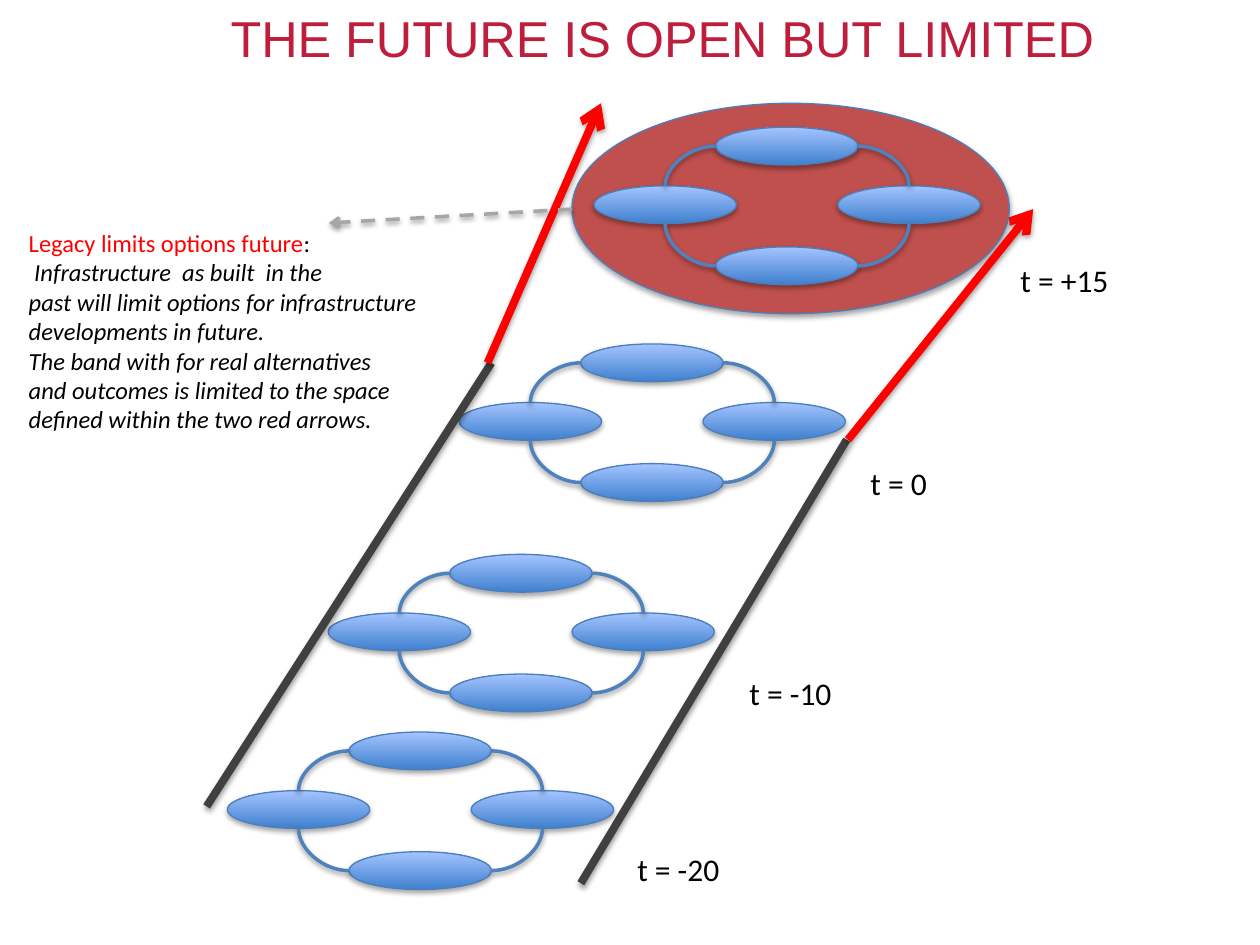
import itertools

import lxml.etree
import pptx
import pptx.dml.color
import pptx.enum.dml
import pptx.enum.shapes
import pptx.enum.text
import pptx.oxml.ns
import pptx.util

COLORS = {
    "title": "BF1D3C",
    "future": "C0504D",
    "outline": "4B7EBC",
    "deep": "3F80CE",
    "pale": "A4C4FF",
    "curve": "4F81BD",
    "past": "404040",
    "limit": "FF0000",
    "note": "A6A6A6",
    "shadow": "000000",
    "text": "000000",
}
NODE_WIDTH, NODE_HEIGHT = 11.3, 3
NODE_OFFSETS = {"top": (0, 0), "left": (-9.65, 4.65), "right": (9.7, 4.65), "bottom": (0, 9.5)}
RINGS = [(46.1, 27.3), (56.8, 10.1), (35.7, 44), (27.7, 58.1)]
RAILS = [
    ((16.4, 64), (39, 28.8), "past", False),
    ((46.1, 70.1), (67.2, 34.9), "past", False),
    ((67.3, 34.9), (82, 16.6), "limit", True),
    ((38.7, 28.8), (47.7, 8.2), "limit", True),
]
TIMES = [
    ("t = -20", 49.6, 67, 8.6),
    ("t = -10", 58.5, 53, 8.6),
    ("t = 0", 68.1, 36.3, 6.5),
    ("t = +15", 80, 20.2, 9.1),
]
LEGACY = [
    " Infrastructure  as built  in the",
    "past will limit options for infrastructure",
    "developments in future.",
    "The band with for real alternatives",
    "and outcomes is limited to the space",
    "defined within the two red arrows.",
]


def rgb(name):
    return pptx.dml.color.RGBColor.from_string(COLORS[name])


def add_element(parent, tag, **attributes):
    return lxml.etree.SubElement(parent, pptx.oxml.ns.qn(tag), attributes)


class Painter:
    columns, rows = 100, 75

    def __init__(self, deck):
        self.page = deck.slides.add_slide(deck.slide_layouts[6])
        self.cell_width = deck.slide_width / self.columns
        self.cell_height = deck.slide_height / self.rows

    def place(self, *lengths):
        sizes = itertools.cycle((self.cell_width, self.cell_height))
        return [round(length * size) for length, size in zip(lengths, sizes)]

    def shade(self, item, distance, opacity):
        effects = add_element(item._element.spPr, "a:effectLst")
        shadow = add_element(
            effects, "a:outerShdw", blurRad=str(pptx.util.Pt(3.1)),
            dist=str(pptx.util.Pt(distance)), dir="5400000", rotWithShape="0",
        )
        color = add_element(shadow, "a:srgbClr", val=COLORS["shadow"])
        add_element(color, "a:alpha", val=str(opacity * 1000))

    def ellipse(self, left, top, width, height, colors):
        shape = self.page.shapes.add_shape(
            pptx.enum.shapes.MSO_SHAPE.OVAL, *self.place(left, top, width, height))
        if len(colors) == 1:
            shape.fill.solid()
            shape.fill.fore_color.rgb = rgb(colors[0])
        else:
            shape.fill.gradient()
            shape.fill.gradient_angle = 90
            for stop, color, position in zip(shape.fill.gradient_stops, colors, (0, 1)):
                stop.color.rgb = rgb(color)
                stop.position = position
        shape.line.color.rgb = rgb("outline")
        shape.line.width = pptx.util.Pt(0.75)
        self.shade(shape, 1.8, 35)

    def line(self, start, end, color, width, arrow=False, dash=None, curved=False):
        kind = pptx.enum.shapes.MSO_CONNECTOR
        connector = self.page.shapes.add_connector(
            kind.CURVE if curved else kind.STRAIGHT, *self.place(*start, *end))
        if curved:
            connector._element.spPr.prstGeom.set("prst", "curvedConnector2")
        connector.line.color.rgb = rgb(color)
        for name, value in {"width": pptx.util.Pt(width), "dash_style": dash}.items():
            setattr(connector.line, name, value)
        if arrow:
            add_element(connector.line._ln, "a:tailEnd", type="arrow")
        self.shade(connector, 1.6, 38)

    def ring(self, left, top):
        nodes = {name: (left + x, top + y) for name, (x, y) in NODE_OFFSETS.items()}
        for corner in nodes.values():
            self.ellipse(*corner, NODE_WIDTH, NODE_HEIGHT, ("deep", "pale"))
        for pole, side in itertools.product(("top", "bottom"), ("left", "right")):
            pole_x, pole_y = nodes[pole]
            side_x, side_y = nodes[side]
            start = (pole_x + NODE_WIDTH * (side == "right"), pole_y + NODE_HEIGHT / 2)
            end = (side_x + NODE_WIDTH / 2, side_y + NODE_HEIGHT * (pole == "bottom"))
            self.line(start, end, "curve", 2, curved=True)

    def text(self, left, top, width, height, paragraphs, size, font="Calibri", title=False):
        box = self.page.shapes.add_textbox(*self.place(left, top, width, height))
        options = pptx.enum.text
        frame_format = {
            "word_wrap": title,
            "auto_size": options.MSO_AUTO_SIZE.NONE if title else options.MSO_AUTO_SIZE.SHAPE_TO_FIT_TEXT,
            "vertical_anchor": options.MSO_ANCHOR.MIDDLE if title else options.MSO_ANCHOR.TOP,
        }
        for name, value in frame_format.items():
            setattr(box.text_frame, name, value)
        for index, spans in enumerate(paragraphs):
            para = box.text_frame.add_paragraph() if index else box.text_frame.paragraphs[0]
            para.alignment = options.PP_ALIGN.CENTER if title else options.PP_ALIGN.LEFT
            for words, color, italic in spans:
                span = para.add_run()
                span.text = words
                span.font.color.rgb = rgb(color)
                for name, value in {"size": pptx.util.Pt(size), "name": font, "italic": italic}.items():
                    setattr(span.font, name, value)


def main():
    deck = pptx.Presentation()
    deck.slide_width = pptx.util.Inches(10)
    deck.slide_height = pptx.util.Inches(7.5)
    painter = Painter(deck)
    painter.ellipse(45.4, 8.2, 34.7, 16.7, ("future",))
    painter.text(7.6, 0.2, 90, 5.5, [[("THE FUTURE IS OPEN BUT LIMITED", "title", False)]],
                 28.8, "Arial", title=True)
    for corner in RINGS:
        painter.ring(*corner)
    for start, end, color, arrow in RAILS:
        painter.line(start, end, color, 4.5, arrow)
    for words, left, top, width in TIMES:
        painter.text(left, top, width, 4, [[(words, "text", False)]], 18)
    painter.line((45.4, 16.6), (26.1, 17.7), "note", 2, arrow=True,
                 dash=pptx.enum.dml.MSO_LINE.DASH)
    heading = [("Legacy limits options future", "limit", False), (":", "text", False)]
    painter.text(1.3, 17.6, 33.3, 17.5, [heading] + [[(words, "text", True)] for words in LEGACY], 14)
    deck.save("out.pptx")


if __name__ == "__main__":
    main()
